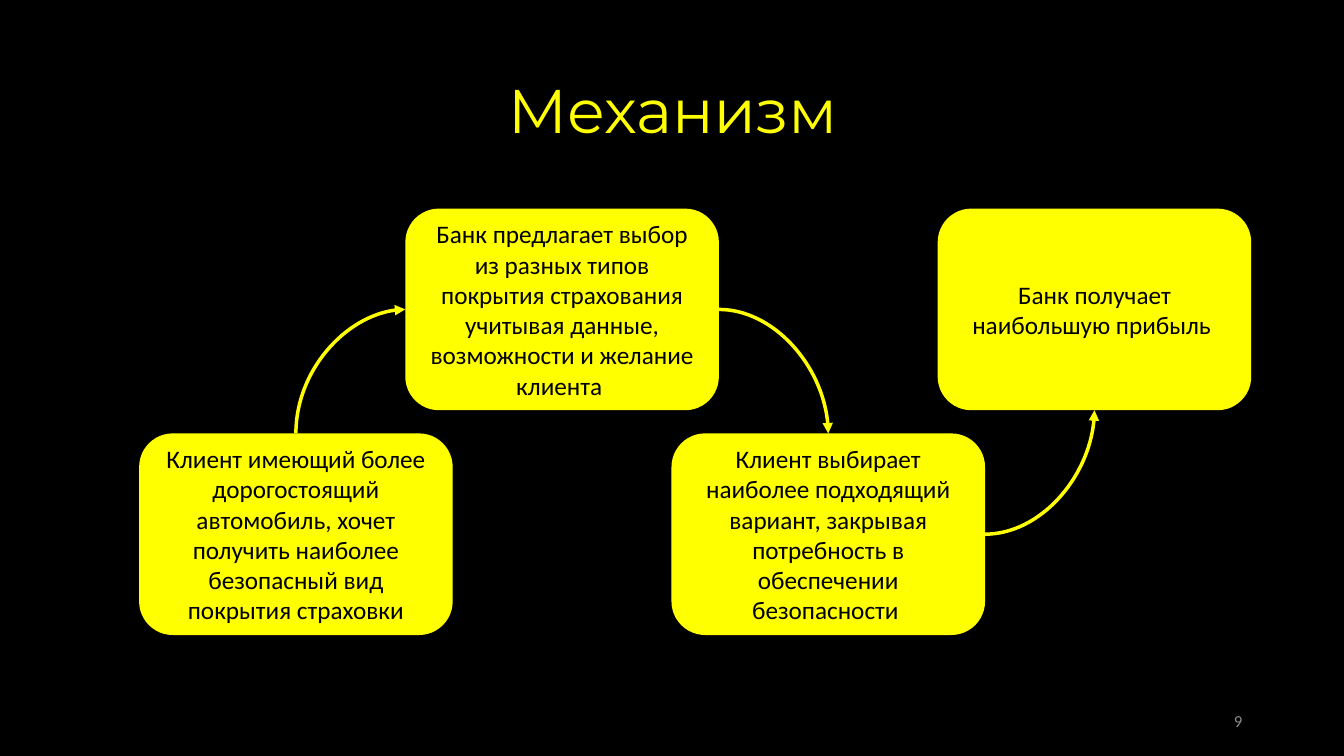
from lxml.etree import SubElement
from pptx import Presentation
from pptx.dml.color import RGBColor
from pptx.enum.shapes import MSO_CONNECTOR, MSO_SHAPE
from pptx.enum.text import MSO_ANCHOR, PP_ALIGN
from pptx.oxml.ns import qn
from pptx.util import Inches, Pt

BLACK = RGBColor(0x00, 0x00, 0x00)
YELLOW = RGBColor(0xFF, 0xFF, 0x00)
GREY = RGBColor(0x8C, 0x8C, 0x8C)

TITLE = "Механизм"
PAGE_NUMBER = "9"
STEPS = [
    "Клиент имеющий более дорогостоящий автомобиль, хочет получить наиболее безопасный вид покрытия страховки",
    "Банк предлагает выбор из разных типов покрытия страхования учитывая данные, возможности и желание клиента ",
    "Клиент выбирает наиболее подходящий вариант, закрывая потребность в обеспечении безопасности ",
    "Банк получает наибольшую прибыль ",
]
TOP, LEFT, BOTTOM, RIGHT = range(4)
ARROW_SIDES = [(TOP, LEFT), (RIGHT, TOP), (RIGHT, BOTTOM)]

STEP_LEFT, STEP_PITCH = 1.38, 2.64
STEP_WIDTH, STEP_HEIGHT = 3.11, 2
LOWER_ROW, UPPER_ROW = 4.3, 2.07


def write(shape, text, size, color, font="Calibri", align=PP_ALIGN.CENTER, spacing=None):
    """Put formatted, vertically centred text into a shape."""
    frame = shape.text_frame
    frame.word_wrap = True
    frame.vertical_anchor = MSO_ANCHOR.MIDDLE
    paragraph = frame.paragraphs[0]
    paragraph.alignment = align
    paragraph.line_spacing = spacing
    run = paragraph.add_run()
    run.text = text
    run.font.name = font
    run.font.size = Pt(size)
    run.font.color.rgb = color


def add_step(slide, index, text):
    """Add one rounded step, alternating between the lower and upper rows."""
    step = slide.shapes.add_shape(
        MSO_SHAPE.ROUNDED_RECTANGLE,
        Inches(STEP_LEFT + index * STEP_PITCH),
        Inches(UPPER_ROW if index % 2 else LOWER_ROW),
        Inches(STEP_WIDTH),
        Inches(STEP_HEIGHT),
    )
    step.shadow.inherit = False
    step.fill.solid()
    step.fill.fore_color.rgb = YELLOW
    step.line.fill.background()
    write(step, text, 18, BLACK)
    return step


def add_arrow(slide, start, end, start_side, end_side):
    """Join two steps with a quarter-curve arrow."""
    arrow = slide.shapes.add_connector(MSO_CONNECTOR.CURVE, 0, 0, 0, 0)
    arrow.begin_connect(start, start_side)
    arrow.end_connect(end, end_side)
    arrow.line.color.rgb = YELLOW
    arrow.line.width = Pt(2.5)
    properties = arrow.element.spPr
    properties.find(qn("a:prstGeom")).set("prst", "curvedConnector2")
    SubElement(properties.find(qn("a:ln")), qn("a:tailEnd"), type="triangle")
    SubElement(properties, qn("a:effectLst"))
    if start_side == TOP:
        width, height = arrow.width, arrow.height
        arrow.left += (width - height) // 2
        arrow.top += (height - width) // 2
        arrow.width, arrow.height = height, width
        transform = properties.find(qn("a:xfrm"))
        for name, value in (("rot", "5400000"), ("flipH", "1"), ("flipV", "1")):
            transform.set(name, value)


def main():
    """Build the mechanism slide."""
    deck = Presentation()
    deck.slide_width, deck.slide_height = Inches(13.33), Inches(7.5)
    slide = deck.slides.add_slide(deck.slide_layouts[5])
    slide.background.fill.solid()
    slide.background.fill.fore_color.rgb = BLACK

    title = slide.shapes.title
    title.left, title.top = Inches(0.92), Inches(0.4)
    title.width, title.height = Inches(11.5), Inches(1.45)
    write(title, TITLE, 44, YELLOW, font="Montserrat", spacing=0.9)

    steps = [add_step(slide, index, text) for index, text in enumerate(STEPS)]
    for start, end, sides in zip(steps, steps[1:], ARROW_SIDES):
        add_arrow(slide, start, end, *sides)

    page = slide.shapes.add_textbox(Inches(9.42), Inches(6.95), Inches(3), Inches(0.4))
    write(page, PAGE_NUMBER, 12, GREY, align=PP_ALIGN.RIGHT)
    deck.save("out.pptx")


if __name__ == "__main__":
    main()
